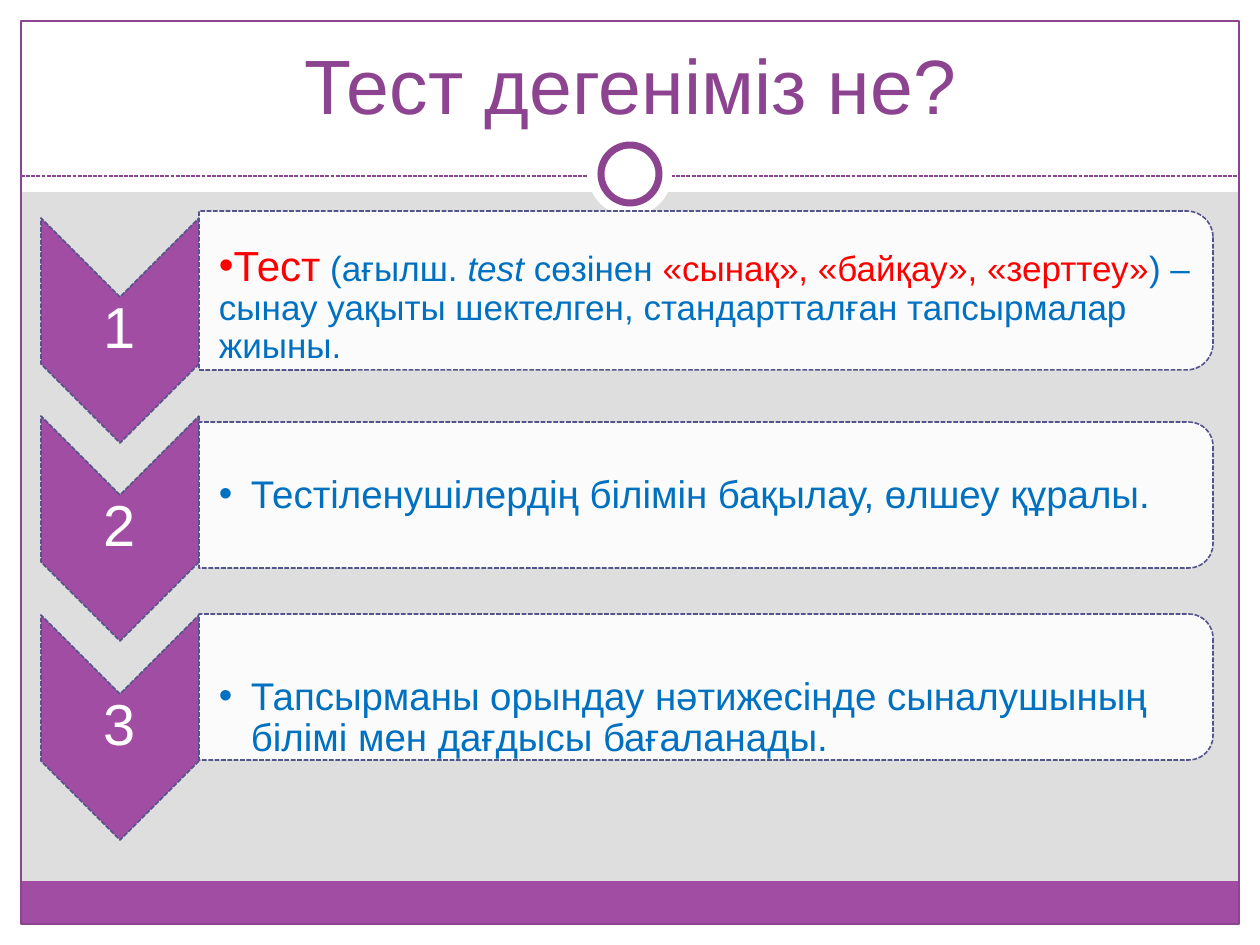
from dataclasses import dataclass

from lxml import etree
from pptx import Presentation
from pptx.dml.color import RGBColor
from pptx.enum.dml import MSO_LINE
from pptx.enum.shapes import MSO_CONNECTOR, MSO_SHAPE
from pptx.enum.text import MSO_ANCHOR, PP_ALIGN
from pptx.oxml.ns import qn
from pptx.util import Pt

RECTANGLE = MSO_SHAPE.RECTANGLE
OVAL = MSO_SHAPE.OVAL
CHEVRON = MSO_SHAPE.CHEVRON
CARD = MSO_SHAPE.ROUND_2_SAME_RECTANGLE
STRAIGHT = MSO_CONNECTOR.STRAIGHT
DASHED = MSO_LINE.SQUARE_DOT
CENTER, LEFT = PP_ALIGN.CENTER, PP_ALIGN.LEFT
TOP, MIDDLE, BOTTOM = MSO_ANCHOR.TOP, MSO_ANCHOR.MIDDLE, MSO_ANCHOR.BOTTOM

EMU_PER_PX = 914400 / 126
WIDTH, HEIGHT = 1260, 945


@dataclass(frozen=True)
class Theme:
    font: str = "Arial"
    background: str = "DEDEDE"
    white: str = "FFFFFF"
    purple: str = "A04DA3"
    dark_purple: str = "8D4490"
    outline: str = "53548A"
    blue: str = "0070C0"
    red: str = "FF0000"
    title_size: int = 44
    number_size: int = 33
    lead_size: int = 24
    body_size: int = 22
    small_size: int = 20


THEME = Theme()


def px(value):
    return round(value * EMU_PER_PX)


def color(value):
    return RGBColor.from_string(value)


def set_attributes(target, values):
    for name, value in values.items():
        setattr(target, name, value)


def format_line(line, line_color, width, dash=None):
    line.color.rgb = color(line_color)
    set_attributes(line, {"width": Pt(width), "dash_style": dash})


def add_box(shapes, kind, box, fill=None, line=None):
    shape = shapes.add_shape(kind, *map(px, box))
    shape.shadow.inherit = False
    if fill:
        shape.fill.solid()
        shape.fill.fore_color.rgb = color(fill)
    else:
        shape.fill.background()
    if line:
        format_line(shape.line, *line)
    else:
        shape.line.fill.background()
    return shape


def add_turned(shapes, kind, box, fill):
    left, top, width, height = box
    shift = (width - height) / 2
    shape = add_box(shapes, kind, (left + shift, top - shift, height, width),
                    fill, (THEME.outline, 0.9, DASHED))
    shape.rotation = 90
    return shape


def add_run(paragraph, text, size, text_color, italic=False):
    run = paragraph.add_run()
    run.text = text
    set_attributes(run.font, {"name": THEME.font, "size": Pt(size), "italic": italic})
    run.font.color.rgb = color(text_color)


def format_frame(frame, anchor, insets):
    sides = ("margin_left", "margin_top", "margin_right", "margin_bottom")
    values = {side: px(inset) for side, inset in zip(sides, insets)}
    set_attributes(frame, {"word_wrap": True, "vertical_anchor": anchor, **values})


def add_text(shapes, box, runs, alignment, anchor, insets):
    frame = shapes.add_textbox(*map(px, box)).text_frame
    format_frame(frame, anchor, insets)
    paragraph = frame.paragraphs[0]
    set_attributes(paragraph, {"alignment": alignment, "line_spacing": 0.9})
    for run in runs:
        add_run(paragraph, *run)
    return paragraph


def add_bullet(paragraph, indent):
    properties = paragraph._p.get_or_add_pPr()
    properties.set("marL", str(px(indent)))
    properties.set("indent", str(-px(indent)))
    etree.SubElement(properties, qn("a:buFont")).set("typeface", THEME.font)
    etree.SubElement(properties, qn("a:buChar")).set("char", "•")


def add_background(slide, box):
    left, top, width, height = box
    margin, header, rule = 21, 192, 176
    right, bottom = left + width, top + height
    inner_width = width - 2 * margin
    slide.background.fill.solid()
    slide.background.fill.fore_color.rgb = color(THEME.background)
    bands = [
        (left, bottom - margin, width, margin),
        (left, top, width, header),
        (left, top, margin, height),
        (right - margin, top, margin, height),
    ]
    for band in bands:
        add_box(slide.shapes, RECTANGLE, band, THEME.white)
    add_box(slide.shapes, RECTANGLE,
            (left + margin, bottom - margin - 43, inner_width, 43), THEME.purple)
    add_box(slide.shapes, RECTANGLE,
            (left + margin, top + margin, inner_width, height - 2 * margin),
            line=(THEME.dark_purple, 0.75))
    divider = slide.shapes.add_connector(
        STRAIGHT, px(left + margin), px(top + rule), px(right - margin), px(top + rule))
    format_line(divider.line, THEME.dark_purple, 0.75, DASHED)
    etree.SubElement(divider.element.spPr, qn("a:effectLst"))
    center = left + width // 2
    for size, line in ((84, None), (58, (THEME.dark_purple, 4))):
        add_box(slide.shapes, OVAL,
                (center - size // 2, top + 174 - size // 2, size, size), THEME.white, line)


def add_title(slide, box, text):
    title = slide.shapes.title
    slide.shapes.element.append(title.element)
    set_attributes(title, dict(zip(("left", "top", "width", "height"), map(px, box))))
    format_frame(title.text_frame, BOTTOM, (12, 6, 12, 6))
    paragraph = title.text_frame.paragraphs[0]
    paragraph.alignment = CENTER
    add_run(paragraph, text, THEME.title_size, THEME.dark_purple)


def add_step(shapes, box, number, card_offset, card_height, text_inset, indent, runs):
    left, top, width, height = box
    chevron_width = 158
    card_left, card_top = left + chevron_width, top + card_offset
    card_width = width - chevron_width
    add_turned(shapes, CHEVRON, (left, top, chevron_width, height), THEME.purple)
    add_text(shapes, (left, top + 78, chevron_width, 68),
             [(str(number), THEME.number_size, THEME.white)], CENTER, MIDDLE, (2, 2, 2, 2))
    card = add_turned(shapes, CARD, (card_left, card_top, card_width, card_height), THEME.white)
    fill_color = card.element.spPr.find(qn("a:solidFill"))[0]
    etree.SubElement(fill_color, qn("a:alpha")).set("val", "90000")
    paragraph = add_text(shapes, (card_left, card_top + 8, card_width - 7, card_height - 15),
                         runs, LEFT, TOP, (20, text_inset, 2, 2))
    add_bullet(paragraph, indent)


def add_steps(slide, box, steps):
    left, top, width, height = box
    shapes = slide.shapes.add_group_shape().shapes
    step_height = 225
    for index, step in enumerate(steps):
        step_top = top + index * (height - step_height) // (len(steps) - 1)
        add_step(shapes, (left, step_top, width, step_height), index + 1, *step)


def main():
    presentation = Presentation()
    set_attributes(presentation, {"slide_width": px(WIDTH), "slide_height": px(HEIGHT)})
    slide = presentation.slides.add_slide(presentation.slide_layouts[5])
    small, body = THEME.small_size, THEME.body_size
    blue, red = THEME.blue, THEME.red
    definition = [
        ("Тест", THEME.lead_size, red),
        (" (ағылш. ", small, blue),
        ("test ", small, blue, True),
        ("сөзінен ", small, blue),
        ("«сынақ», «байқау», «зерттеу»", small, red),
        (") – сынау уақыты шектелген, стандартталған тапсырмалар жиыны.", small, blue),
    ]
    purpose = [("Тестіленушілердің білімін бақылау, өлшеу құралы.", body, blue)]
    result = [("Тапсырманы орындау нәтижесінде сыналушының білімі мен дағдысы бағаланады.",
               body, blue)]
    steps = [
        (-7, 159, 26, 0, definition),
        (6, 146, 50, 32, purpose),
        (-1, 146, 55, 32, result),
    ]
    add_background(slide, (0, 0, WIDTH, HEIGHT))
    add_title(slide, (65, 26, 1131, 110), "Тест дегеніміз не?")
    add_steps(slide, (41, 218, 1172, 622), steps)
    presentation.save("out.pptx")


if __name__ == "__main__":
    main()
